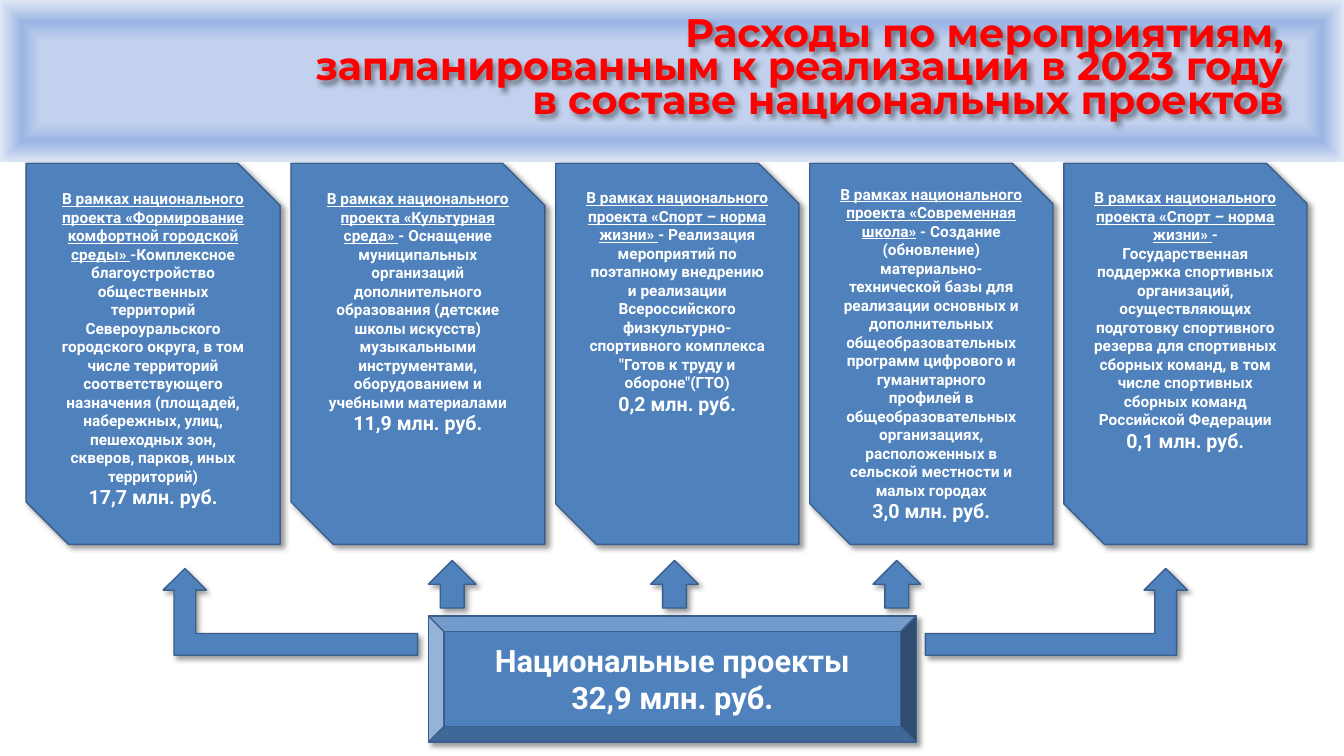
"""Build the slide on national project spending in 2023."""
from dataclasses import dataclass
from typing import Optional

import lxml.etree
import pptx
import pptx.dml.color
import pptx.enum.shapes
import pptx.enum.text
import pptx.oxml
import pptx.oxml.ns
import pptx.util

Pt = pptx.util.Pt
Kind = pptx.enum.shapes.MSO_SHAPE
Align = pptx.enum.text.PP_ALIGN
Anchor = pptx.enum.text.MSO_ANCHOR
NS = 'xmlns:a="http://schemas.openxmlformats.org/drawingml/2006/main"'


@dataclass(frozen=True)
class Theme:
    fill: str = "4F81BD"
    edge: str = "3A5F8C"
    white: str = "FFFFFF"
    red: str = "FF0000"
    black: str = "000000"
    glow: tuple = ((50, "C2D1ED"), (73, "9AB5E4"), (100, "E1E8F5"))
    head: str = "Montserrat"
    body: str = "Roboto"
    title: float = 28.4
    total: float = 22
    cost: float = 14
    note: float = 11


@dataclass(frozen=True)
class Box:
    left: float
    top: float
    width: float
    height: float

    def place(self) -> tuple:
        """Give the four lengths in points."""
        return Pt(self.left), Pt(self.top), Pt(self.width), Pt(self.height)


@dataclass(frozen=True)
class Card:
    lead: str
    text: str
    cost: str
    width: float
    anchor: Anchor = Anchor.TOP


@dataclass(frozen=True)
class Arrow:
    kind: Kind
    box: Box
    flip: bool = False


THEME = Theme()
WIDE, HIGH, BAND = 960, 540, 116.6
START, GAP, TALL = 18.7, 7.75, 272.2
TITLE = "Расходы по мероприятиям, запланированным к реализации в 2023 году в составе национальных проектов"
TOTAL = ("Национальные проекты", "32,9 млн. руб.")
CARDS = (
    Card("В рамках национального проекта «Формирование комфортной городской среды» ",
         "-Комплексное благоустройство общественных территорий Североуральского городского округа, "
         "в том числе территорий соответствующего назначения (площадей, набережных, улиц, "
         "пешеходных зон, скверов, парков, иных территорий)", "17,7 млн. руб.", 181.4),
    Card("В рамках национального проекта «Культурная среда» ",
         "- Оснащение муниципальных организаций дополнительного образования (детские школы искусств) "
         "музыкальными инструментами, оборудованием и учебными материалами", "11,9 млн. руб.", 181.4),
    Card("В рамках национального проекта «Спорт – норма жизни» ",
         "- Реализация мероприятий по поэтапному внедрению и реализации Всероссийского "
         "физкультурно-спортивного комплекса \"Готов к труду и обороне\"(ГТО)", "0,2 млн. руб.", 173.7),
    Card("В рамках национального проекта «Современная школа»",
         " - Создание (обновление) материально-технической базы для реализации основных и "
         "дополнительных общеобразовательных программ цифрового и гуманитарного профилей в "
         "общеобразовательных организациях, расположенных в сельской местности и малых городах",
         "3,0 млн. руб.", 173.7, Anchor.MIDDLE),
    Card("В рамках национального проекта «Спорт – норма жизни» ",
         "- Государственная поддержка спортивных организаций, осуществляющих подготовку спортивного "
         "резерва для спортивных сборных команд, в том числе спортивных сборных команд "
         "Российской Федерации", "0,1 млн. руб.", 173.7),
)
ARROWS = (
    Arrow(Kind.BENT_UP_ARROW, Box(661, 406, 187.2, 62)),
    Arrow(Kind.BENT_UP_ARROW, Box(116.6, 406, 181.8, 62), True),
    *(Arrow(Kind.UP_ARROW, Box(306 + 158.8 * step, 400.3, 34, 34)) for step in range(3)),
)


def tint(name: str) -> pptx.dml.color.RGBColor:
    """Turn a hex name into a colour."""
    return pptx.dml.color.RGBColor.from_string(name)


def shade(shape) -> None:
    """Cast a soft shadow down and to the right."""
    shape.shadow.inherit = False
    cast = pptx.oxml.parse_xml(
        f'<a:outerShdw {NS} blurRad="{Pt(4)}" dist="{Pt(3)}" dir="2700000" algn="tl" rotWithShape="0">'
        f'<a:srgbClr val="{THEME.black}"><a:alpha val="40000"/></a:srgbClr></a:outerShdw>')
    shape.element.spPr.find(pptx.oxml.ns.qn("a:effectLst")).append(cast)


def add_run(para, text: str, size: float, face: str, hue: str, under: Optional[bool] = None):
    """Add one bold run to a paragraph."""
    run = para.add_run()
    run.text = text
    font = run.font
    font.size, font.name, font.bold, font.underline = Pt(size), face, True, under
    font.color.rgb = tint(hue)
    return run


def add_block(slide, kind: Kind, box: Box):
    """Add a blue shape with an edge and a shadow."""
    shape = slide.shapes.add_shape(kind, *box.place())
    shape.fill.solid()
    shape.fill.fore_color.rgb = tint(THEME.fill)
    shape.line.color.rgb = tint(THEME.edge)
    shape.line.width = Pt(1)
    shade(shape)
    return shape


def add_band(slide) -> None:
    """Add the glowing band on top and the white line below it."""
    band = slide.shapes.add_shape(Kind.RECTANGLE, *Box(0, 0, WIDE, BAND).place())
    band.shadow.inherit = False
    band.line.fill.background()
    stops = "".join(f'<a:gs pos="{at * 1000}"><a:srgbClr val="{hue}"/></a:gs>' for at, hue in THEME.glow)
    band.element.spPr.find(pptx.oxml.ns.qn("a:prstGeom")).addnext(pptx.oxml.parse_xml(
        f'<a:gradFill {NS} rotWithShape="1"><a:gsLst>{stops}</a:gsLst><a:path path="shape">'
        '<a:fillToRect l="50000" t="50000" r="50000" b="50000"/></a:path></a:gradFill>'))
    line = slide.shapes.add_connector(
        pptx.enum.shapes.MSO_CONNECTOR.STRAIGHT, Pt(0), Pt(BAND), Pt(WIDE), Pt(BAND))
    line.line.color.rgb = tint(THEME.white)
    line.line.width = Pt(2)
    lxml.etree.SubElement(line.element.spPr, pptx.oxml.ns.qn("a:effectLst"))


def add_title(slide) -> None:
    """Place the title over the band."""
    title = slide.shapes.title
    title.left, title.top, title.width, title.height = Box(193, 11.5, 731.5, 78.5).place()
    title.fill.background()
    shade(title)
    frame = title.text_frame
    frame.word_wrap = True
    frame.auto_size = pptx.enum.text.MSO_AUTO_SIZE.NONE
    frame.vertical_anchor = Anchor.BOTTOM
    para = frame.paragraphs[0]
    para.alignment, para.line_spacing, para.space_before = Align.RIGHT, 0.7, Pt(0)
    run = add_run(para, TITLE, THEME.title, THEME.head, THEME.red)
    run.font.element_line = None
    title.element.getparent().append(title.element)


def add_card(slide, card: Card, left: float) -> None:
    """Add one project card with its cost."""
    shape = add_block(slide, Kind.SNIP_2_DIAG_RECTANGLE, Box(left, BAND, card.width, TALL))
    frame = shape.text_frame
    frame.word_wrap = True
    frame.vertical_anchor = card.anchor
    para, cost = frame.paragraphs[0], frame.add_paragraph()
    para.alignment = cost.alignment = Align.CENTER
    add_run(para, card.lead, THEME.note, THEME.body, THEME.white, True)
    add_run(para, card.text, THEME.note, THEME.body, THEME.white)
    add_run(cost, card.cost, THEME.cost, THEME.body, THEME.white)


def add_total(slide) -> None:
    """Add the bevelled box with the total."""
    frame = add_block(slide, Kind.BEVEL, Box(306, 440, 348.5, 90)).text_frame
    frame.word_wrap = True
    frame.vertical_anchor = Anchor.MIDDLE
    for para, text in zip((frame.paragraphs[0], frame.add_paragraph()), TOTAL):
        para.alignment = Align.CENTER
        add_run(para, text, THEME.total, THEME.body, THEME.white)


def main() -> None:
    """Draw the slide and save it."""
    deck = pptx.Presentation()
    deck.slide_width, deck.slide_height = Pt(WIDE), Pt(HIGH)
    slide = deck.slides.add_slide(deck.slide_layouts[5])
    add_band(slide)
    add_total(slide)
    left = START
    for card in CARDS:
        add_card(slide, card, left)
        left += card.width + GAP
    for arrow in ARROWS:
        shape = add_block(slide, arrow.kind, arrow.box)
        if arrow.flip:
            shape.element.spPr.find(pptx.oxml.ns.qn("a:xfrm")).set("flipH", "1")
    add_title(slide)
    deck.save("out.pptx")


if __name__ == "__main__":
    main()
